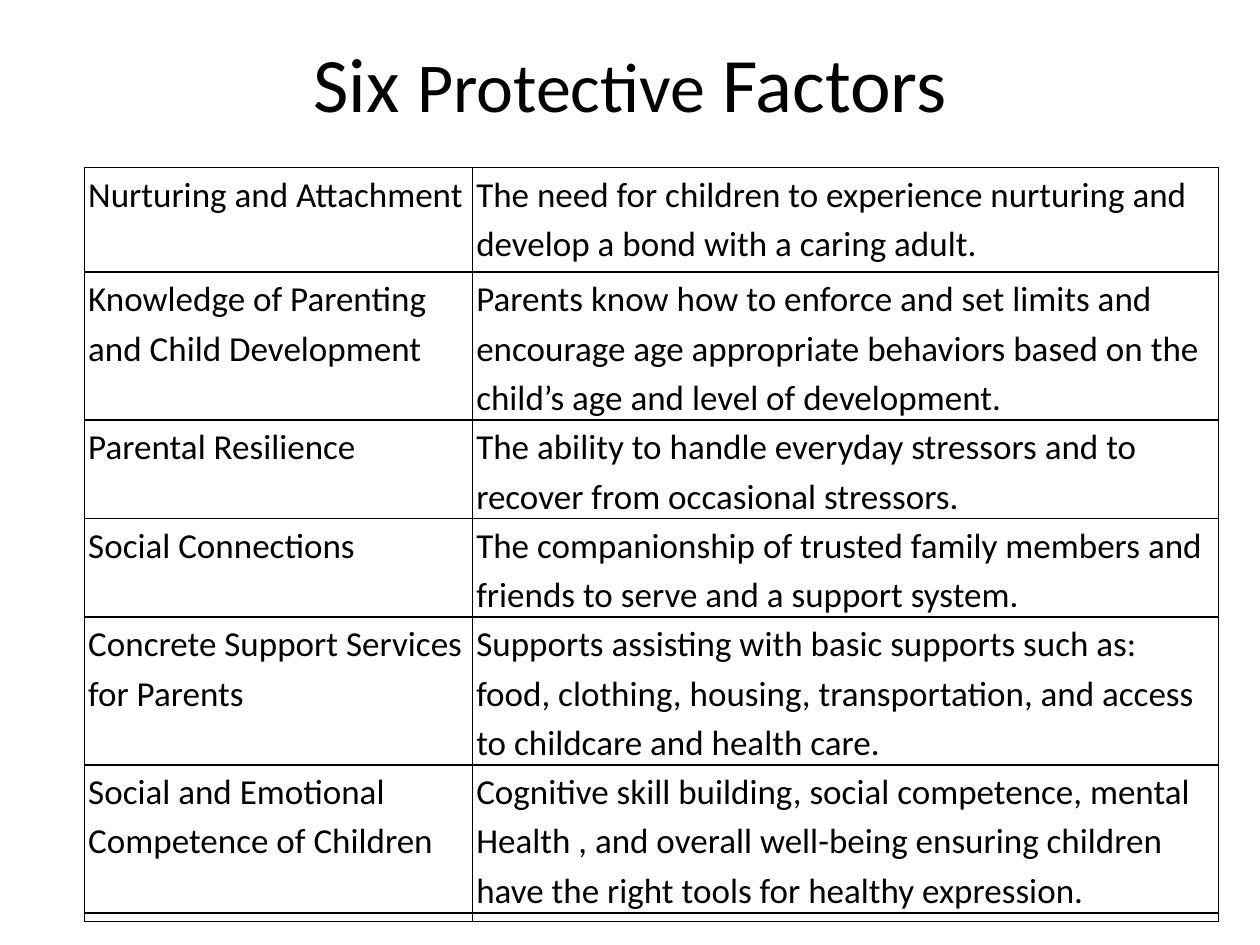
"""Build a slide with a table of six protective factors."""
from lxml.etree import SubElement as Sub
from pptx import Presentation
from pptx.dml.color import RGBColor as Color
from pptx.enum.text import MSO_ANCHOR as Anchor, PP_ALIGN as Align
from pptx.oxml.ns import qn
from pptx.util import Inches, Pt

HUES = {"ink": "000000", "page": "FFFFFF"}
FACTORS = [
    ("Nurturing and Attachment",
     "The need for children to experience nurturing and develop a bond with a caring adult."),
    ("Knowledge of Parenting and Child Development",
     "Parents know how to enforce and set limits and encourage age appropriate "
     "behaviors based on the child’s age and level of development."),
    ("Parental Resilience",
     "The ability to handle everyday stressors and to recover from occasional stressors."),
    ("Social Connections",
     "The companionship of trusted family members and friends to serve and a support system."),
    ("Concrete Support Services for Parents",
     "Supports assisting with basic supports such as: food, clothing, housing, "
     "transportation, and access to childcare and health care."),
    ("Social and Emotional Competence of Children",
     "Cognitive skill building, social competence, mental Health , and overall "
     "well-being ensuring children have the right tools for healthy expression."),
    ("", ""),
]
COLS = [3.08, 5.92]
ROWS = [0.83, 0.8, 0.78, 0.75, 0.8, 0.8, 0.07]


def add_run(para, text, size):
    run = para.add_run()
    run.text = text
    run.font.size = Pt(size)
    run.font.name = "Calibri"
    run.font.color.rgb = Color.from_string(HUES["ink"])


def add_edges(cell):
    props = cell._tc.get_or_add_tcPr()
    for side in ("lnL", "lnR", "lnT", "lnB"):
        line = Sub(props, qn(f"a:{side}"), w=str(Pt(1)))
        fill = Sub(line, qn("a:solidFill"))
        Sub(fill, qn("a:srgbClr"), val=HUES["ink"])


deck = Presentation()
deck.slide_width, deck.slide_height = Inches(10), Inches(7.5)
slide = deck.slides.add_slide(deck.slide_layouts[5])
slide.background.fill.solid()
slide.background.fill.fore_color.rgb = Color.from_string(HUES["page"])

title = slide.shapes.title
title.left, title.top = Inches(0.5), Inches(0.02)
title.width, title.height = Inches(9), Inches(1.25)
title.text_frame.vertical_anchor = Anchor.MIDDLE
head = title.text_frame.paragraphs[0]
head.alignment = Align.CENTER
for text, size in (("Six ", 44), ("Protective", 40), (" Factors", 44)):
    add_run(head, text, size)

frame = slide.shapes.add_table(len(ROWS), len(COLS), Inches(0.67), Inches(1.33),
                               Inches(sum(COLS)), Inches(sum(ROWS)))
table = frame.table
table.first_row = table.horz_banding = False
for col, width in zip(table.columns, COLS):
    col.width = Inches(width)
for row, height, texts in zip(table.rows, ROWS, FACTORS):
    row.height = Inches(height)
    for cell, text in zip(row.cells, texts):
        cell.margin_left = cell.margin_right = Inches(0.03)
        cell.margin_top = cell.margin_bottom = 0
        add_edges(cell)
        cell.fill.background()
        para = cell.text_frame.paragraphs[0]
        if text:
            para.line_spacing = 1.15
            add_run(para, text, 20)
        else:
            Sub(para._p, qn("a:endParaRPr"), sz="400")

deck.save("out.pptx")
